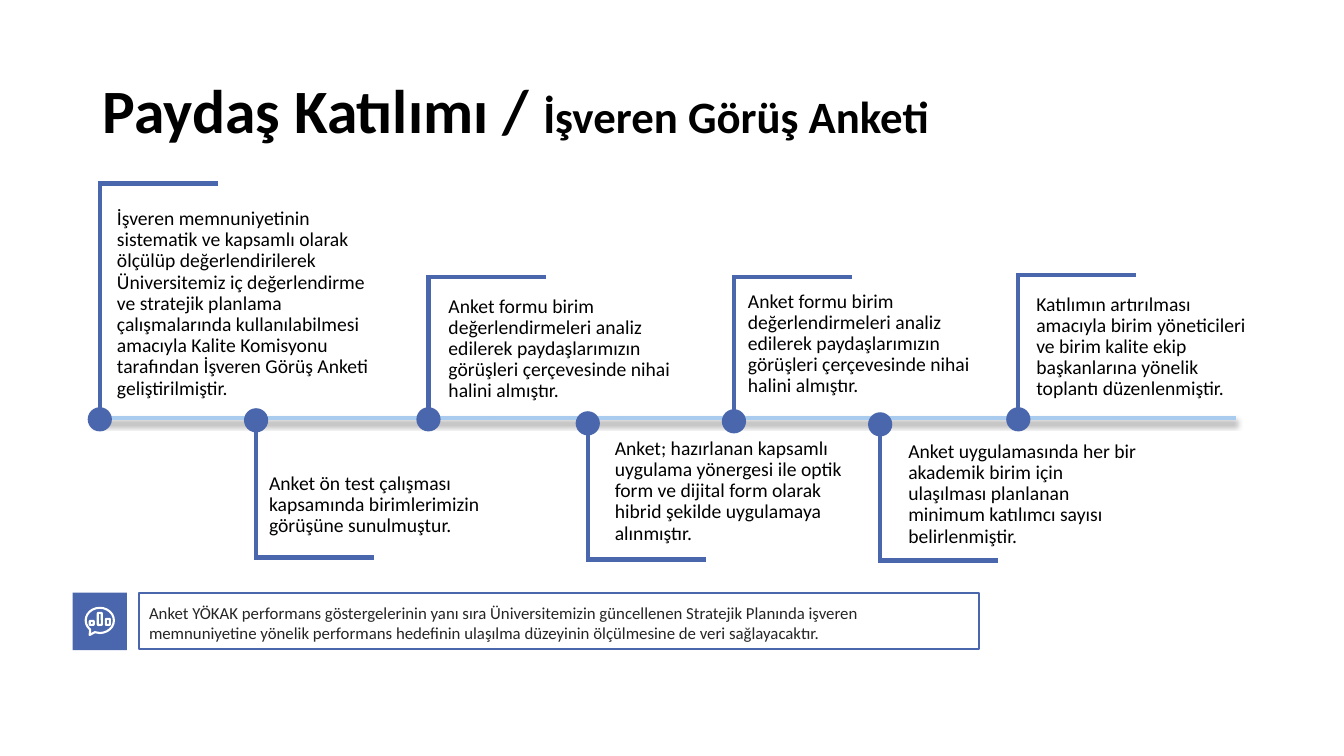
"""Builds the employer survey timeline slide."""
from lxml.etree import SubElement
from pptx import Presentation
from pptx.dml.color import RGBColor
from pptx.enum.shapes import MSO_CONNECTOR, MSO_SHAPE
from pptx.enum.text import MSO_ANCHOR, MSO_AUTO_SIZE, PP_ALIGN
from pptx.oxml.ns import qn
from pptx.util import Inches, Pt

BLUE = RGBColor(0x4A, 0x66, 0xAC)
LIGHT_BLUE = RGBColor(0xA9, 0xCC, 0xEE)
BLACK = RGBColor(0, 0, 0)
DARK = RGBColor(0x25, 0x25, 0x25)
WHITE = RGBColor(0xFF, 0xFF, 0xFF)
DOT = 0.24
BRANCH = 1.17

prs = Presentation()
prs.slide_width, prs.slide_height = Inches(13.33), Inches(7.5)
s = prs.slides.add_slide(prs.slide_layouts[1])


def add_line(x1, y1, x2, y2, color):
    cx = s.shapes.add_connector(MSO_CONNECTOR.STRAIGHT, *map(Inches, (x1, y1, x2, y2)))
    cx.line.color.rgb = color
    cx.line.width = Pt(3)
    return SubElement(cx._element.spPr, qn("a:effectLst"))


def add_shape(kind, x, y, w, h, fill=None, line=None):
    sp = s.shapes.add_shape(kind, *map(Inches, (x, y, w, h)))
    sp.shadow.inherit = False
    if fill is None:
        sp.fill.background()
    else:
        sp.fill.solid()
        sp.fill.fore_color.rgb = fill
    if line is None:
        sp.line.fill.background()
    else:
        sp.line.color.rgb = line
        sp.line.width = Pt(1.5)
    return sp


title = s.shapes.title
title.left, title.top, title.width, title.height = map(Inches, (0.92, 0.4, 11.5, 1.45))
tf = title.text_frame
tf.auto_size = MSO_AUTO_SIZE.NONE
tf.vertical_anchor = MSO_ANCHOR.MIDDLE
p = tf.paragraphs[0]
p.alignment = PP_ALIGN.LEFT
p.line_spacing = 0.9
for text, size in (("Paydaş Katılımı / ", 44), ("İşveren Görüş Anketi", 32)):
    r = p.add_run()
    r.text = text
    r.font.name, r.font.size, r.font.bold = "Calibri", Pt(size), True
    r.font.color.rgb = BLACK

effects = add_line(0.92, 4.15, 12.26, 4.15, LIGHT_BLUE)
shadow = SubElement(effects, qn("a:outerShdw"), blurRad=str(Pt(4)), dist=str(Pt(3)),
                    dir="5400000", rotWithShape="0")
shadow_color = SubElement(shadow, qn("a:srgbClr"), val="000000")
SubElement(shadow_color, qn("a:alpha"), val="40000")

steps = [
    (0.99, 4.16, 1.82, (1.06, 2.02, 2.8, 2.05),
     "İşveren memnuniyetinin sistematik ve kapsamlı olarak ölçülüp değerlendirilerek "
     "Üniversitemiz iç değerlendirme ve stratejik planlama çalışmalarında kullanılabilmesi "
     "amacıyla Kalite Komisyonu tarafından İşveren Görüş Anketi geliştirilmiştir."),
    (2.54, 4.17, 5.53, (2.57, 4.65, 2.29, 0.67),
     "Anket ön test çalışması kapsamında birimlerimizin görüşüne sunulmuştur."),
    (4.25, 4.16, 2.75, (4.35, 2.89, 2.5, 1.34),
     "Anket formu birim değerlendirmeleri analiz edilerek paydaşlarımızın görüşleri "
     "çerçevesinde nihai halini almıştır."),
    (5.83, 4.2, 5.55, (6, 4.3, 2.64, 1.37),
     "Anket; hazırlanan kapsamlı uygulama yönergesi ile optik form ve dijital form olarak "
     "hibrid şekilde uygulamaya alınmıştır."),
    (7.28, 4.18, 2.75, (7.32, 2.84, 2.54, 1.16),
     "Anket formu birim değerlendirmeleri analiz edilerek paydaşlarımızın görüşleri "
     "çerçevesinde nihai halini almıştır."),
    (8.73, 4.21, 5.56, (8.91, 4.33, 2.55, 1.16),
     "Anket uygulamasında her bir akademik birim için ulaşılması planlanan minimum "
     "katılımcı sayısı belirlenmiştir."),
    (10.1, 4.16, 2.73, (10.18, 2.87, 2.35, 1.16),
     "Katılımın artırılması amacıyla birim yöneticileri ve birim kalite ekip başkanlarına "
     "yönelik toplantı düzenlenmiştir."),
]
for i, (x, dot_y, end_y, box, text) in enumerate(steps):
    add_line(x, dot_y, x, end_y, BLUE)
    add_line(x - 0.02, end_y, x + BRANCH, end_y, BLUE)
    add_shape(MSO_SHAPE.OVAL, x - DOT / 2, dot_y - DOT / 2, DOT, DOT, fill=BLUE)
    if i == 0:
        tb = s.placeholders[1]
        tb.left, tb.top, tb.width, tb.height = map(Inches, box)
    else:
        tb = s.shapes.add_textbox(*map(Inches, box))
    tf = tb.text_frame
    tf.word_wrap = True
    tf.auto_size = MSO_AUTO_SIZE.NONE
    p = tf.paragraphs[0]
    p.text = text
    p.line_spacing = 0.9
    p.space_before = Pt(0)
    pPr = p._p.get_or_add_pPr()
    pPr.set("marL", "0")
    pPr.set("indent", "0")
    SubElement(pPr, qn("a:buNone"))
    font = p.runs[0].font
    font.name, font.size = "Calibri", Pt(14)
    font.color.rgb = BLACK

add_shape(MSO_SHAPE.RECTANGLE, 0.72, 5.88, 0.54, 0.57, fill=BLUE)
bubble = add_shape(MSO_SHAPE.OVAL_CALLOUT, 0.85, 6.03, 0.28, 0.25, line=WHITE)
bubble.adjustments[0], bubble.adjustments[1] = -0.36, 0.58
for i, height in enumerate((0.04, 0.12, 0.06)):
    add_shape(MSO_SHAPE.ROUNDED_RECTANGLE, 0.89 + 0.08 * i, 6.2 - height, 0.04, height, line=WHITE)

note = add_shape(MSO_SHAPE.RECTANGLE, 1.38, 5.88, 8.33, 0.56, line=BLUE)
tf = note.text_frame
tf.word_wrap = True
tf.vertical_anchor = MSO_ANCHOR.TOP
tf.margin_left = tf.margin_right = tf.margin_top = tf.margin_bottom = Inches(0.1)
p = tf.paragraphs[0]
p.text = ("Anket YÖKAK performans göstergelerinin yanı sıra Üniversitemizin güncellenen Stratejik "
          "Planında işveren memnuniyetine yönelik performans hedefinin ulaşılma düzeyinin "
          "ölçülmesine de veri sağlayacaktır.")
p.alignment = PP_ALIGN.LEFT
font = p.runs[0].font
font.name, font.size = "Calibri", Pt(12)
font.color.rgb = DARK

prs.save("out.pptx")
